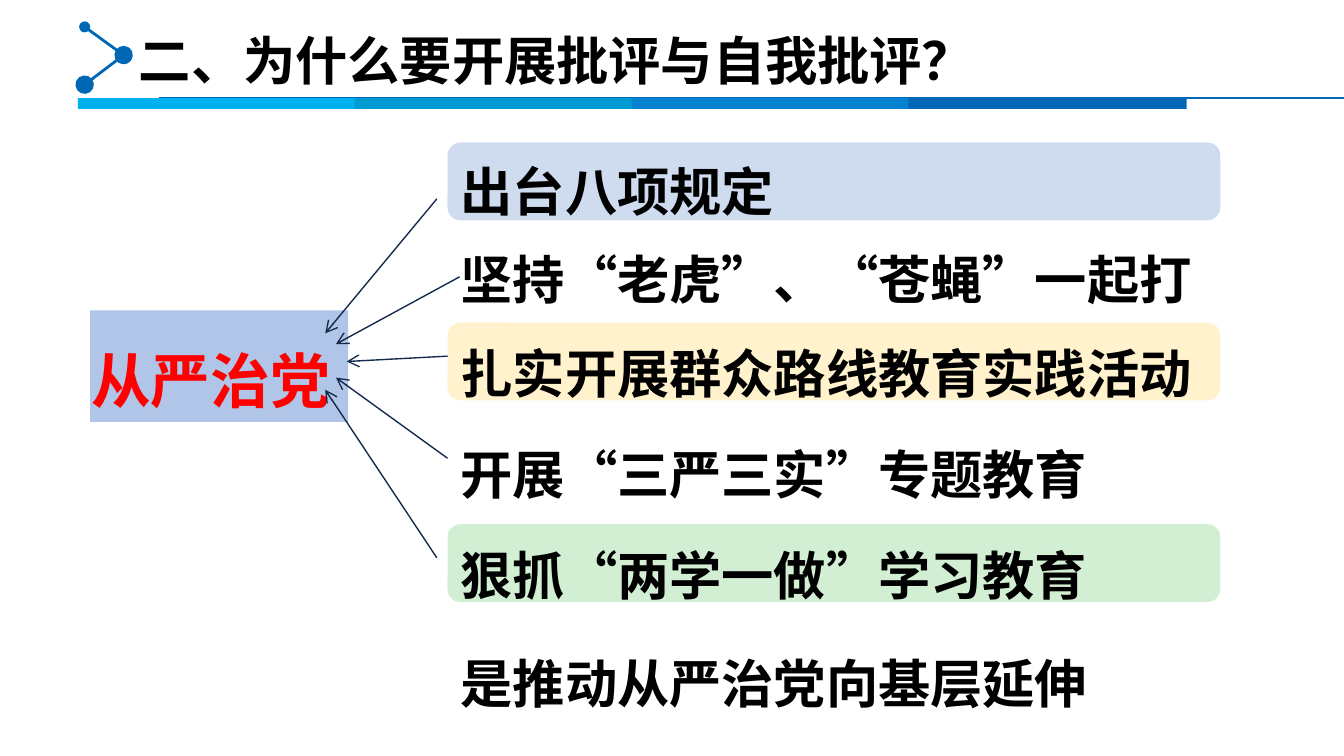
from dataclasses import dataclass

from lxml import etree
from pptx import Presentation
from pptx.dml.color import RGBColor
from pptx.enum import lang, shapes, text
from pptx.oxml import ns
from pptx.util import Inches, Pt


@dataclass(frozen=True)
class Theme:
    ink: str = "000000"
    red: str = "FF0000"
    blue: str = "0067B4"
    navy: str = "152A4B"
    label: str = "B0C5E7"
    bars: tuple = ("00B0F0", "009BD2", "0282D0", "0067B4")
    bands: tuple = ("CFDCF0", "FFF2CC", "D2EED3")
    body: int = 28
    large: int = 32
    latin: str = "Arial"
    asian: str = "Noto Sans CJK SC"


THEME = Theme()


def put_text(slide, box, words, size=THEME.body, color=THEME.ink,
             font=THEME.latin, align=text.PP_ALIGN.JUSTIFY, lines=1.5, wrap=True):
    shape = slide.shapes.add_textbox(*map(Inches, box))
    frame = shape.text_frame
    frame.word_wrap = wrap
    frame.auto_size = text.MSO_AUTO_SIZE.SHAPE_TO_FIT_TEXT
    para = frame.paragraphs[0]
    para.alignment = align
    para.line_spacing = lines
    run = para.add_run()
    run.text = words
    run.font.size = Pt(size)
    run.font.bold = True
    run.font.color.rgb = RGBColor.from_string(color)
    run.font.name = font
    run.font.language_id = lang.MSO_LANGUAGE_ID.SIMPLIFIED_CHINESE
    latin = run._r.rPr.find(ns.qn("a:latin"))
    east = etree.Element(ns.qn("a:ea"), typeface=THEME.asian)
    latin.addnext(east)


def put_block(slide, box, fill, kind=shapes.MSO_SHAPE.RECTANGLE):
    shape = slide.shapes.add_shape(kind, *map(Inches, box))
    shape.shadow.inherit = False
    shape.fill.solid()
    shape.fill.fore_color.rgb = RGBColor.from_string(fill)
    shape.line.fill.background()


def put_line(slide, start, end, color, width, head=None, tail=None):
    line = slide.shapes.add_connector(
        shapes.MSO_CONNECTOR.STRAIGHT, *map(Inches, start + end))
    line.line.color.rgb = RGBColor.from_string(color)
    line.line.width = Pt(width)
    props = line._element.spPr
    stroke = props.find(ns.qn("a:ln"))
    for tag, mark in (("a:headEnd", head), ("a:tailEnd", tail)):
        if mark:
            kind, size = mark
            etree.SubElement(stroke, ns.qn(tag), type=kind, w=size, len=size)
    etree.SubElement(props, ns.qn("a:effectLst"))


def draw_header(slide, box, title):
    left, top, width, height = box
    put_text(slide, (left + 0.32, top - 0.04, 6.48, 0.57), title,
             font=THEME.asian, align=text.PP_ALIGN.CENTER, lines=1, wrap=False)
    tip = (left + 0.34, top + 0.21)
    big = ("oval", "lg")
    put_line(slide, (left + 0.05, top), tip, THEME.blue, 1.5, ("oval", "med"), big)
    put_line(slide, tip, (left + 0.05, top + 0.43), THEME.blue, 1.5, tail=big)
    base = top + height
    put_line(slide, (left + 0.6, base), (left + width, base), THEME.blue, 1)
    for i, color in enumerate(THEME.bars):
        put_block(slide, (left + 2.06 * i, base, 2.07, 0.08), color)


def draw_label(slide, box, words):
    left, top, width, height = box
    put_block(slide, box, THEME.label)
    put_text(slide, (left - 0.09, top - 0.07, 2, 0.91), words,
             size=THEME.large, color=THEME.red)


def draw_points(slide, box, points):
    left, top, width, height = box
    for color, y in zip(THEME.bands, (top + 0.16, top + 1.5, top + 3)):
        put_block(slide, (left, y, width, 0.58), color,
                  shapes.MSO_SHAPE.ROUNDED_RECTANGLE)
    for y, words in points:
        put_text(slide, (left, y, width + 0.42, 0.81), words)


def draw_arrows(slide, pairs):
    for start, end in pairs:
        put_line(slide, start, end, THEME.navy, 0.75, tail=("arrow", "med"))


def main():
    deck = Presentation()
    deck.slide_width, deck.slide_height = Inches(10), Inches(10 * 9 / 16)
    slide = deck.slides.add_slide(deck.slide_layouts[6])
    draw_label(slide, (0.67, 2.31, 1.92, 0.83), "从严治党")
    draw_points(slide, (3.33, 0.9, 5.75, 4.47), (
        (0.9, "出台八项规定"),
        (1.56, "坚持“老虎”、“苍蝇”一起打"),
        (2.26, "扎实开展群众路线教育实践活动"),
        (3.01, "开展“三严三实”专题教育"),
        (3.76, "狠抓“两学一做”学习教育"),
        (4.56, "是推动从严治党向基层延伸"),
    ))
    draw_header(slide, (0.58, 0.2, 9.42, 0.53), "二、为什么要开展批评与自我批评？")
    draw_arrows(slide, (
        ((3.25, 1.48), (2.42, 2.48)),
        ((3.42, 2.06), (2.5, 2.56)),
        ((3.33, 2.65), (2.58, 2.69)),
        ((3.33, 3.41), (2.5, 2.81)),
        ((3.25, 4.15), (2.42, 2.9)),
    ))
    deck.save("out.pptx")


if __name__ == "__main__":
    main()
